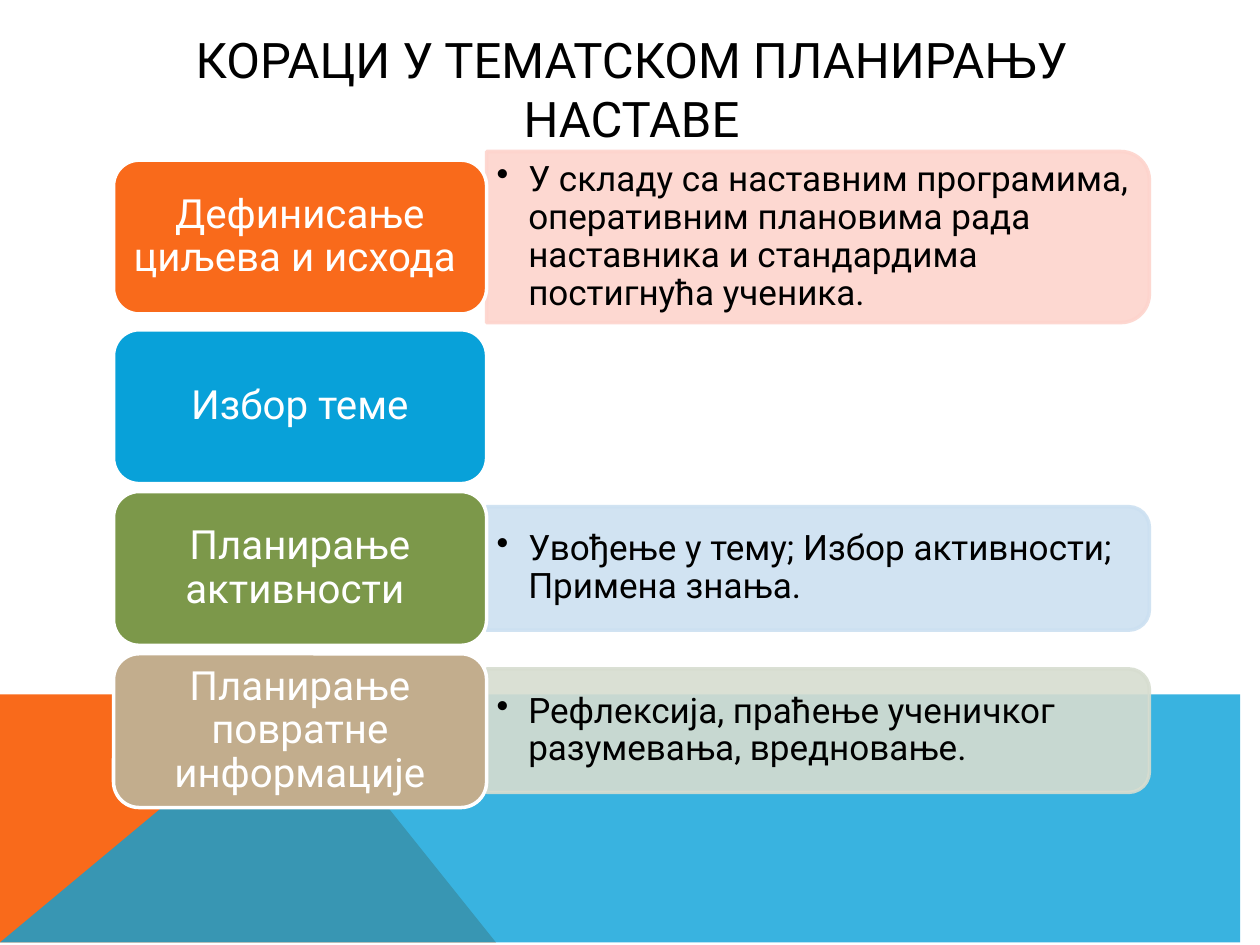
from lxml.etree import SubElement
from pptx import Presentation
from pptx.dml.color import RGBColor
from pptx.enum.shapes import MSO_SHAPE as Preset
from pptx.enum.text import MSO_ANCHOR as Anchor, PP_ALIGN as Align
from pptx.oxml.ns import qn
from pptx.util import Cm, Pt

FONT = "Roboto"
BLACK = RGBColor(0x00, 0x00, 0x00)
WHITE = RGBColor(0xFF, 0xFF, 0xFF)
ORANGE = RGBColor(0xF9, 0x6A, 0x1B)
BLUE = RGBColor(0x08, 0xA1, 0xD9)
GREEN = RGBColor(0x7C, 0x98, 0x4A)
TAN = RGBColor(0xC2, 0xAD, 0x8D)
PALE_RED = RGBColor(0xFD, 0xD4, 0xCD)
PALE_BLUE = RGBColor(0xCC, 0xE0, 0xF1)
PALE_GREEN = RGBColor(0xD7, 0xDD, 0xD0)

SLIDE_WIDTH, SLIDE_HEIGHT = 25.4, 19.05
LABEL_WIDTH, LABEL_HEIGHT = 7.52, 3.1

# label top (cm), label, label colour, detail, detail colour, detail height (cm)
STEPS = [
    (3.23, "Дефинисање циљева и исхода ", ORANGE,
     "У складу са наставним програмима, оперативним плановима рада "
     "наставника и стандардима постигнућа ученика.", PALE_RED, 3.45),
    (6.65, "Избор теме", BLUE, None, None, None),
    (9.91, "Планирање активности ", GREEN,
     "Увођење у тему; Избор активности; Примена знања.", PALE_BLUE, 2.49),
    (13.18, "Планирање повратне информације", TAN,
     "Рефлексија, праћење ученичког разумевања, вредновање.", PALE_GREEN, 2.49),
]


def set_alpha(fill_parent, percent):
    """Make every solid colour below the given XML element partly transparent."""
    for color in fill_parent.iter(qn("a:srgbClr")):
        SubElement(color, qn("a:alpha"), val=str(percent * 1000))


def paint(shape, fill, line=None, opacity=100):
    shape.shadow.inherit = False
    shape.fill.solid()
    shape.fill.fore_color.rgb = fill
    if line is None:
        shape.line.fill.background()
    else:
        shape.line.color.rgb = line
        shape.line.width = Pt(2)
    if opacity < 100:
        set_alpha(shape.element.spPr, opacity)


def write(shape, text, size, color, align=Align.CENTER, spacing=1.0,
          inset=(0.25, 0.13), bullet=False):
    frame = shape.text_frame
    frame.word_wrap = True
    frame.vertical_anchor = Anchor.MIDDLE
    frame.margin_left = frame.margin_right = Cm(inset[0])
    frame.margin_top = frame.margin_bottom = Cm(inset[1])
    paragraph = frame.paragraphs[0]
    paragraph.alignment = align
    paragraph.line_spacing = spacing
    if bullet:
        properties = paragraph._p.get_or_add_pPr()
        properties.set("marL", str(Cm(0.64)))
        properties.set("indent", str(-Cm(0.64)))
        SubElement(properties, qn("a:buChar"), char="•")
    run = paragraph.add_run()
    run.text = text
    run.font.name = FONT
    run.font.size = Pt(size)
    run.font.color.rgb = color


def add_polygon(slide, points, color, opacity=100):
    builder = slide.shapes.build_freeform(*points[0], scale=Cm(1))
    builder.add_line_segments(points[1:], close=True)
    paint(builder.convert_to_shape(), color, opacity=opacity)


def add_footer_bands(slide, top, peak, foot):
    """Draw two overlapping bands that meet at the peak."""
    corner = (0, SLIDE_HEIGHT)
    add_polygon(slide, [corner, (0, top), (peak, top), (foot, SLIDE_HEIGHT)], ORANGE)
    add_polygon(slide, [corner, (peak, top), (SLIDE_WIDTH, top),
                        (SLIDE_WIDTH, SLIDE_HEIGHT)], BLUE, opacity=80)


def add_title(slide, left, top, width, height):
    box = slide.shapes.add_textbox(Cm(left), Cm(top), Cm(width), Cm(height))
    write(box, "КОРАЦИ У ТЕМАТСКОМ ПЛАНИРАЊУ НАСТАВЕ", 28, BLACK)


def add_detail(slide, left, top, width, height, text, color):
    """Add a panel rounded on its right side, with bulleted text over it."""
    shift = (width - height) / 2
    panel = slide.shapes.add_shape(Preset.ROUND_2_SAME_RECTANGLE, Cm(left + shift),
                                   Cm(top - shift), Cm(height), Cm(width))
    panel.rotation = 90
    paint(panel, color, line=color, opacity=90)
    box = slide.shapes.add_textbox(Cm(left), Cm(top), Cm(width - 0.15), Cm(height))
    write(box, text, 20, BLACK, align=Align.LEFT, spacing=0.9,
          inset=(0.2, 0.1), bullet=True)


def add_label(slide, left, top, width, height, text, color):
    label = slide.shapes.add_shape(Preset.ROUNDED_RECTANGLE, Cm(left), Cm(top),
                                   Cm(width), Cm(height))
    paint(label, color, line=WHITE)
    write(label, text, 23, WHITE, spacing=0.9, inset=(0.25, 0.13))


def add_steps(slide, left, width):
    for top, label, color, detail, pale, detail_height in STEPS:
        if detail:
            detail_top = top + (LABEL_HEIGHT - detail_height) / 2
            add_detail(slide, left + LABEL_WIDTH, detail_top, width - LABEL_WIDTH,
                       detail_height, detail, pale)
        add_label(slide, left, top, LABEL_WIDTH, LABEL_HEIGHT, label, color)


def main():
    presentation = Presentation()
    presentation.slide_width = Cm(SLIDE_WIDTH)
    presentation.slide_height = Cm(SLIDE_HEIGHT)
    slide = presentation.slides.add_slide(presentation.slide_layouts[6])
    add_footer_bands(slide, top=14.03, peak=5.66, foot=9.93)
    add_title(slide, 2.29, 1.02, 20.88, 1.52)
    add_steps(slide, left=2.29, width=20.88)
    presentation.save("out.pptx")


if __name__ == "__main__":
    main()
